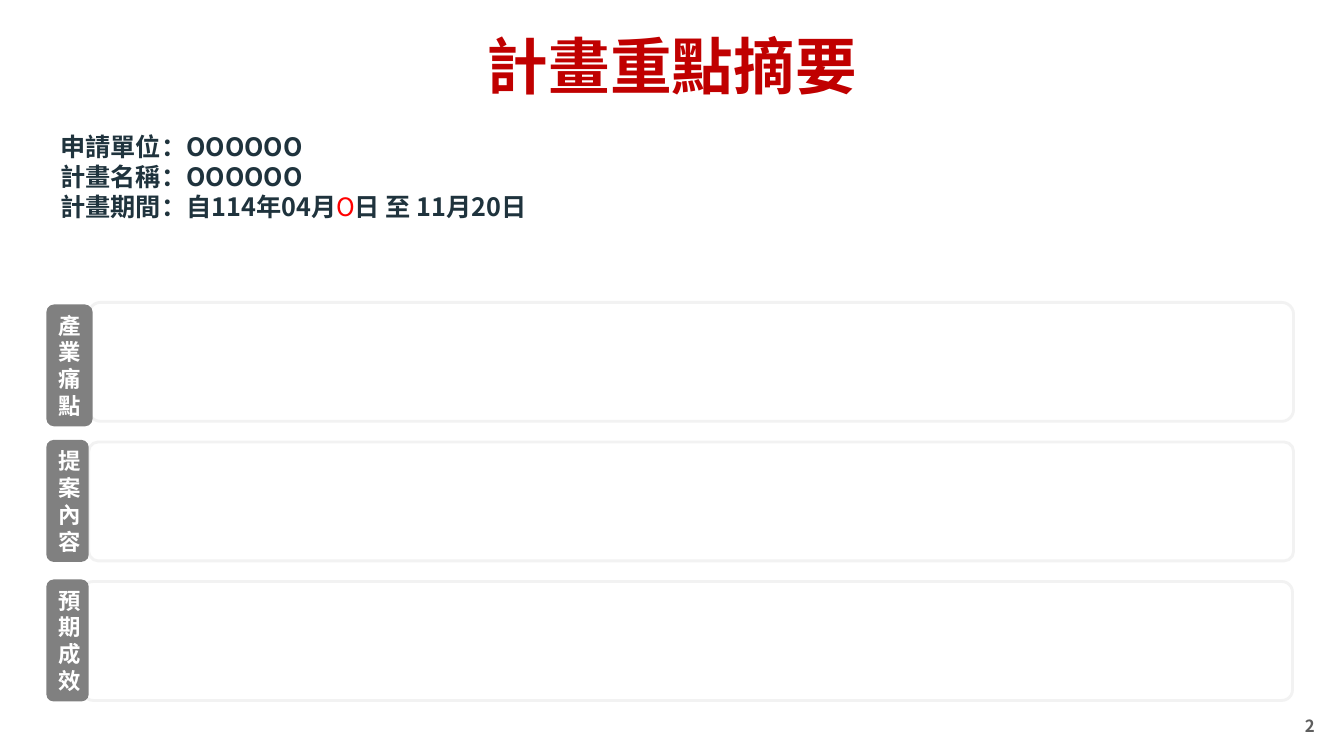
import pptx
import pptx.util
import pptx.dml.color
import pptx.enum.shapes
import pptx.enum.text
import pptx.oxml
import pptx.oxml.ns

FONT = "Noto Sans CJK SC"
HUES = {"title": "C00000", "ink": "1F333D", "mark": "FF0000", "page": "5E5E5E",
        "tab": "808080", "edge": "F2F2F2", "white": "FFFFFF"}
WIDE, HIGH = pptx.util.Inches(13.33), pptx.util.Inches(7.5)
ALIGN = pptx.enum.text.PP_ALIGN
ANCHOR = pptx.enum.text.MSO_ANCHOR
FIT = pptx.enum.text.MSO_AUTO_SIZE


def rgb(hue):
    return pptx.dml.color.RGBColor.from_string(HUES[hue])


def span(box):
    """Turn percent shares of the slide into lengths."""
    left, top, width, height = box
    return (int(WIDE * left / 100), int(HIGH * top / 100),
            int(WIDE * width / 100), int(HIGH * height / 100))


def style(run, size, hue, bold=True):
    run.font.size = pptx.util.Pt(size)
    run.font.bold = bold
    run.font.color.rgb = rgb(hue)
    run.font.name = FONT
    east = pptx.oxml.parse_xml(
        f'<a:ea {pptx.oxml.ns.nsdecls("a")} typeface="{FONT}"/>')
    run.font._element.find(pptx.oxml.ns.qn("a:latin")).addnext(east)


def label(frame, text, size, hue):
    """Fill a frame with one centred line."""
    frame.text = text
    line = frame.paragraphs[0]
    line.alignment = ALIGN.CENTER
    style(line.runs[0], size, hue)


def inset(frame, anchor):
    frame.vertical_anchor = anchor
    frame.margin_left = frame.margin_right = pptx.util.Inches(0.06)
    frame.margin_top = frame.margin_bottom = pptx.util.Inches(0.06)


def round_box(slide, box, hue, curve):
    kind = pptx.enum.shapes.MSO_SHAPE.ROUNDED_RECTANGLE
    shape = slide.shapes.add_shape(kind, *span(box))
    shape.shadow.inherit = False
    shape.adjustments[0] = curve
    shape.fill.solid()
    shape.fill.fore_color.rgb = rgb(hue)
    return shape


def add_title(slide, box, text):
    title = slide.shapes.title
    title.left, title.top, title.width, title.height = span(box)
    frame = title.text_frame
    frame.auto_size = FIT.NONE
    inset(frame, ANCHOR.MIDDLE)
    label(frame, text, 44, "title")


def add_facts(slide, box, lines):
    frame = slide.shapes.add_textbox(*span(box)).text_frame
    frame.word_wrap = True
    frame.auto_size = FIT.SHAPE_TO_FIT_TEXT
    for place, parts in enumerate(lines):
        line = frame.add_paragraph() if place else frame.paragraphs[0]
        for text, hue in parts:
            run = line.add_run()
            run.text = text
            style(run, 18, hue, hue != "mark")


def add_panel(slide, box, indent, curve):
    left, top, width, height = box
    panel = round_box(slide, (left + indent, top, width - indent, height),
                      "white", curve)
    panel.line.color.rgb = rgb("edge")
    panel.line.width = pptx.util.Pt(2)


def add_tab(slide, box, text, width, drop):
    """Narrow tab: its text wraps to one character a line."""
    left, top, _, height = box
    tab = round_box(slide, (left, top + drop, width, height + 0.4), "tab", 0.17)
    tab.line.fill.background()
    frame = tab.text_frame
    frame.word_wrap = True
    frame.auto_size = FIT.SHAPE_TO_FIT_TEXT
    frame.vertical_anchor = ANCHOR.MIDDLE
    label(frame, text, 16, "white")


def add_rows(slide, box, rows):
    """Stack equal rows: panels behind, tabs in front."""
    left, top, width, height = box
    gap = 2.73
    tall = (height - gap * (len(rows) - 1)) / len(rows)
    boxes = [(left, top + i * (tall + gap), width - trim, tall)
             for i, (*_, trim) in enumerate(rows)]
    for spot, (_, _, _, indent, curve, _) in zip(boxes, rows):
        add_panel(slide, spot, indent, curve)
    for spot, (text, wide, drop, *_) in zip(boxes, rows):
        add_tab(slide, spot, text, wide, drop)


def add_page(slide, box, text):
    frame = slide.shapes.add_textbox(*span(box)).text_frame
    frame.word_wrap = False
    frame.auto_size = FIT.SHAPE_TO_FIT_TEXT
    inset(frame, ANCHOR.BOTTOM)
    label(frame, text, 12, "page")


def main():
    deck = pptx.Presentation()
    deck.slide_width, deck.slide_height = WIDE, HIGH
    slide = deck.slides.add_slide(deck.slide_layouts[5])

    # Heading and page number
    add_title(slide, (0, 3.33, 100, 10.53), "計畫重點摘要")
    add_page(slide, (96.25, 94, 2.4, 4.13), "2")

    # Rows: text, tab width, tab drop, panel indent, corner, right trim
    add_rows(slide, (3.45, 40, 92.8, 52.65), [
        ("產業痛點", 3.45, 0.27, 3.15, 0.1, 0),
        ("提案內容", 3.15, -0.27, 3.15, 0.08, 0),
        ("預期成效", 3.15, -0.27, 2.7, 0.09, 0.08),
    ])

    # Project facts
    add_facts(slide, (3.75, 16.67, 92.8, 13.47), [
        [("申請單位：OOOOOO", "ink")],
        [("計畫名稱：OOOOOO", "ink")],
        [("計畫期間：自114年04月", "ink"), ("O", "mark"),
         ("日 至 11月20日", "ink")],
    ])
    deck.save("out.pptx")


if __name__ == "__main__":
    main()
